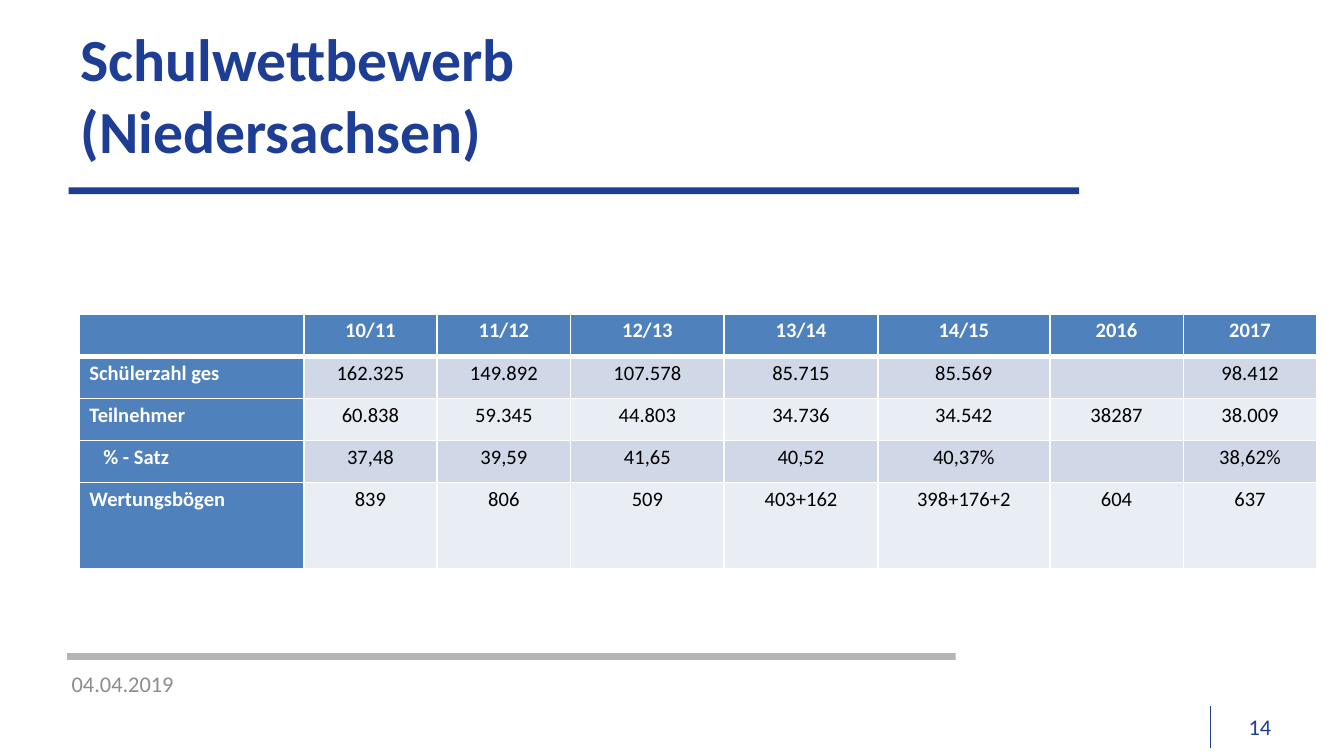
"""Build the slide on the school competition in Niedersachsen."""
from lxml.etree import SubElement
from pptx import Presentation
from pptx.dml.color import RGBColor
from pptx.enum.shapes import MSO_CONNECTOR, MSO_SHAPE
from pptx.enum.text import MSO_ANCHOR, PP_ALIGN
from pptx.oxml.ns import qn
from pptx.util import Inches, Pt

NAVY = RGBColor(0x1E, 0x3E, 0x95)
RULE_GREY = RGBColor(0x66, 0x6D, 0x64)
DATE_GREY = RGBColor(0x8C, 0x8C, 0x8C)
HEADER_BLUE = RGBColor(0x4F, 0x81, 0xBD)
BANDS = [RGBColor(0xE9, 0xED, 0xF4), RGBColor(0xD0, 0xD8, 0xE8)]
WHITE = RGBColor(0xFF, 0xFF, 0xFF)
BLACK = RGBColor(0, 0, 0)

ROWS = [
    ["", "10/11", "11/12", "12/13", "13/14", "14/15", "2016", "2017"],
    ["Schülerzahl ges", "162.325", "149.892", "107.578", "85.715", "85.569", "", "98.412"],
    ["Teilnehmer", "60.838", "59.345", "44.803", "34.736", "34.542", "38287", "38.009"],
    ["% - Satz", "37,48", "39,59", "41,65", "40,52", "40,37%", "", "38,62%"],
    ["Wertungsbögen", "839", "806", "509", "403+162", "398+176+2", "604", "637"],
]
COLUMN_SHARES = [16.7, 9.93, 9.93, 11.43, 11.43, 12.8, 9.93, 9.93]
ROW_SHARES = [5.56] * 4 + [11.38]

presentation = Presentation()
presentation.slide_width = Inches(10)
presentation.slide_height = presentation.slide_width * 9 // 16
slide = presentation.slides.add_slide(presentation.slide_layouts[5])
shapes = slide.shapes


def area(left, top, width, height):
    """Turn percentages of the slide into lengths."""
    across, down = presentation.slide_width / 100, presentation.slide_height / 100
    return int(left * across), int(top * down), int(width * across), int(height * down)


def style(paragraph, size, color, bold=False):
    """Format every run of a paragraph."""
    for run in paragraph.runs:
        run.font.name = "Calibri"
        run.font.size = Pt(size)
        run.font.bold = bold
        run.font.color.rgb = color


for bounds, color in [((5.1, 24.8, 75.2, 0.9), NAVY), ((5, 86.4, 66.1, 0.9), RULE_GREY)]:
    rule = shapes.add_shape(MSO_SHAPE.RECTANGLE, *area(*bounds))
    rule.shadow.inherit = False
    rule.fill.solid()
    rule.fill.fore_color.rgb = color
    rule.line.fill.background()
SubElement(rule.fill._xPr.find(".//" + qn("a:srgbClr")), qn("a:alpha"), val="50000")

left, top, width, height = area(90.07, 93.4, 0, 5.6)
divider = shapes.add_connector(MSO_CONNECTOR.STRAIGHT, left, top, left, top + height)
divider.line.color.rgb = NAVY
divider.line.width = Pt(0.75)
SubElement(divider._element.spPr, qn("a:effectLst"))

title = shapes.title
title.left, title.top, title.width, title.height = area(5, 4, 75.4, 16.7)
title.text_frame.vertical_anchor = MSO_ANCHOR.MIDDLE
paragraph = title.text_frame.paragraphs[0]
paragraph.alignment = PP_ALIGN.LEFT
paragraph.add_run().text = "Schulwettbewerb "
paragraph.add_line_break()
paragraph.add_run().text = "(Niedersachsen)"
style(paragraph, 32, NAVY, True)

for text, bounds, alignment, color in [
    ("04.04.2019", (4.35, 87.8, 15.7, 5.33), PP_ALIGN.LEFT, DATE_GREY),
    ("14", (90.07, 93.4, 5.5, 5.33), PP_ALIGN.RIGHT, NAVY),
]:
    footer = shapes.add_textbox(*area(*bounds))
    footer.text_frame.word_wrap = True
    footer.text_frame.vertical_anchor = MSO_ANCHOR.MIDDLE
    footer.text_frame.text = text
    footer.text_frame.paragraphs[0].alignment = alignment
    style(footer.text_frame.paragraphs[0], 12, color)

bounds = area(5.9, 41.6, sum(COLUMN_SHARES), sum(ROW_SHARES))
table = shapes.add_table(len(ROWS), len(COLUMN_SHARES), *bounds).table
table.horz_banding = False
for column, share in zip(table.columns, COLUMN_SHARES):
    column.width = area(0, 0, share, 0)[2]
for row, share in zip(table.rows, ROW_SHARES):
    row.height = area(0, 0, 0, share)[3]

for row_index, values in enumerate(ROWS):
    for column_index, value in enumerate(values):
        cell = table.cell(row_index, column_index)
        is_header = row_index == 0 or column_index == 0
        cell.margin_left = cell.margin_right = Pt(5.4)
        cell.margin_top = cell.margin_bottom = 0
        if value == "% - Satz":
            cell.margin_left = Pt(12.9)
        cell.text_frame.text = value
        paragraph = cell.text_frame.paragraphs[0]
        paragraph.line_spacing = 1.15
        paragraph.alignment = PP_ALIGN.CENTER if column_index else PP_ALIGN.LEFT
        style(paragraph, 11, WHITE if is_header else BLACK, is_header)
        if not value:
            SubElement(paragraph._p, qn("a:endParaRPr"), sz="1100")
        for side in "LRTB":
            is_thick = (row_index, side) in [(0, "B"), (1, "T")]
            border = SubElement(cell._tc.get_or_add_tcPr(), qn(f"a:ln{side}"), w=str(Pt(3 if is_thick else 1)))
            SubElement(SubElement(border, qn("a:solidFill")), qn("a:srgbClr"), val=str(WHITE))
        cell.fill.solid()
        cell.fill.fore_color.rgb = HEADER_BLUE if is_header else BANDS[row_index % 2]

presentation.save("out.pptx")
